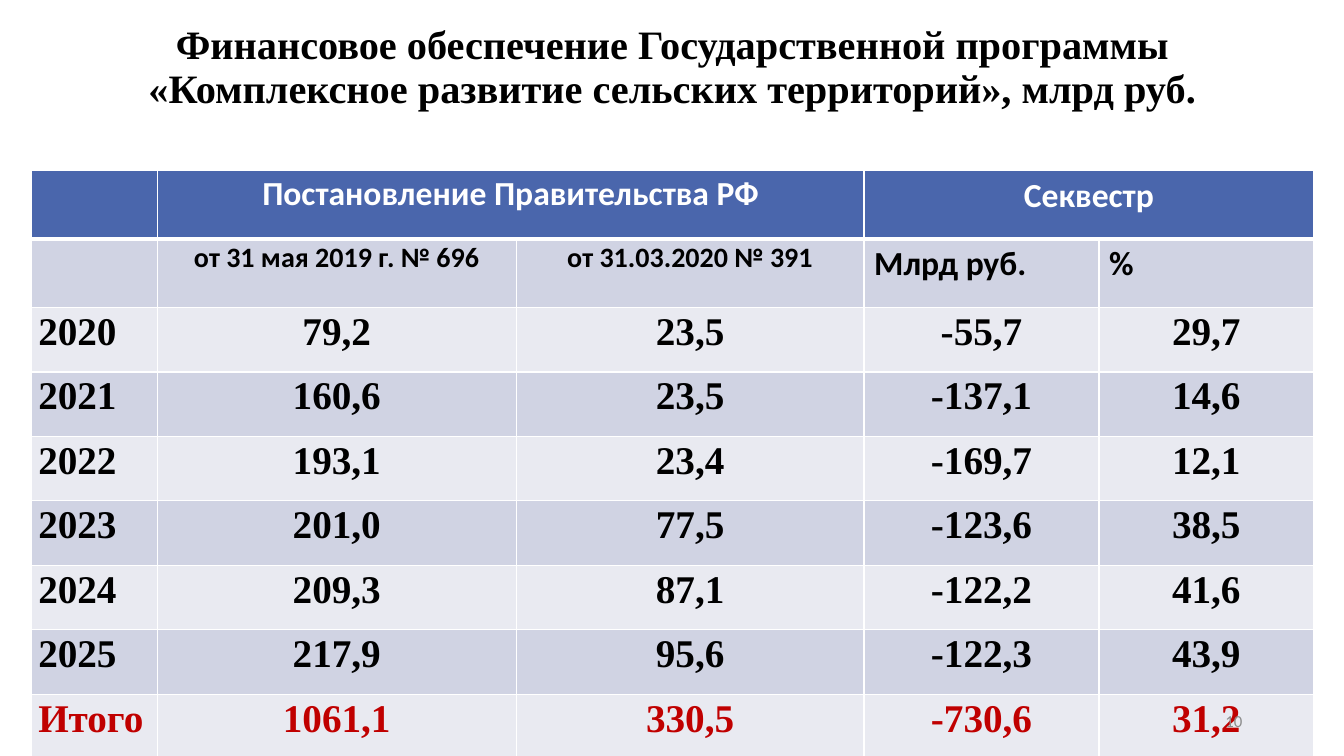
from dataclasses import dataclass

from lxml import etree
from pptx import Presentation
from pptx.dml.color import RGBColor
from pptx.enum.text import MSO_ANCHOR, PP_ALIGN
from pptx.oxml.ns import qn
from pptx.util import Pt

LEFT, CENTER, RIGHT = PP_ALIGN.LEFT, PP_ALIGN.CENTER, PP_ALIGN.RIGHT
MIDDLE = MSO_ANCHOR.MIDDLE
SCALE = 9144


@dataclass(frozen=True)
class Theme:
    """Colours, fonts and type sizes of the slide."""
    white: str = "FFFFFF"
    black: str = "000000"
    blue: str = "4A66AC"
    dark: str = "D0D3E3"
    light: str = "E9EAF1"
    red: str = "C00000"
    gray: str = "8C8C8C"
    sans: str = "Calibri"
    serif: str = "Times New Roman"
    title: float = 28.8
    body: float = 28
    head: float = 24
    sub: float = 20
    note: float = 12


def px(count):
    """Turn pixels into EMU."""
    return count * SCALE


class Page:
    """Draws elements on one slide in one theme."""

    def __init__(self, slide, theme):
        """Keep the slide and the theme."""
        self.slide, self.theme = slide, theme

    def phrase(self, frame, text, size, face, color, align, bold=True):
        """Put one styled paragraph into a text frame."""
        para = frame.paragraphs[0]
        para.text, para.alignment = text, align
        font = para.font
        font.size, font.name, font.bold = Pt(size), face, bold
        font.color.rgb = RGBColor.from_string(color)
        return para

    def label(self, box, text, size, face, color, align, bold=True):
        """Add a text box centred on its height."""
        frame = self.slide.shapes.add_textbox(*map(px, box)).text_frame
        frame.word_wrap = True
        frame.vertical_anchor = MIDDLE
        return self.phrase(frame, text, size, face, color, align, bold)

    def grid(self, left, top, cols, rows):
        """Add an empty table with the given column widths and row heights."""
        table = self.slide.shapes.add_table(
            len(rows), len(cols), px(left), px(top), px(sum(cols)), px(sum(rows))).table
        for col, width in zip(table.columns, cols):
            col.width = px(width)
        for row, height in zip(table.rows, rows):
            row.height = px(height)
        return table

    def paint(self, cell, fill, above=1, below=1):
        """Give a cell its fill and white borders."""
        props = cell._tc.get_or_add_tcPr()
        for side, width in zip("LRTB", (1, 1, above, below)):
            line = etree.SubElement(props, qn(f"a:ln{side}"), w=str(Pt(width)))
            solid = etree.SubElement(line, qn("a:solidFill"))
            etree.SubElement(solid, qn("a:srgbClr"), val=self.theme.white)
        cell.fill.solid()
        cell.fill.fore_color.rgb = RGBColor.from_string(fill)

    def entry(self, cell, text, size, face, color, align=CENTER, tight=True):
        """Fill a cell with text, tight ones with slim margins and looser lines."""
        para = self.phrase(cell.text_frame, text, size, face, color, align)
        if tight:
            cell.margin_left = cell.margin_right = px(7)
            cell.margin_top = cell.margin_bottom = 0
            para.line_spacing, para.space_after = 1.07, Pt(8)


TITLE = ("Финансовое обеспечение Государственной программы "
         "«Комплексное развитие сельских территорий», млрд руб.")
COLS = [125, 356, 345, 233, 213]
DATA = [
    ("2020", "79,2", "23,5", "-55,7", "29,7"),
    ("2021", "160,6", "23,5", "-137,1", "14,6"),
    ("2022", "193,1", "23,4", "-169,7", "12,1"),
    ("2023", "201,0", "77,5", "-123,6", "38,5"),
    ("2024", "209,3", "87,1", "-122,2", "41,6"),
    ("2025", "217,9", "95,6", "-122,3", "43,9"),
    ("Итого", "1061,1", "330,5", "-730,6", "31,2"),
]


def main():
    """Build the slide and save it."""
    deck = Presentation()
    deck.slide_width, deck.slide_height = px(1333), px(750)
    theme = Theme()
    page = Page(deck.slides.add_slide(deck.slide_layouts[6]), theme)

    title = page.label((92, 15, 1150, 106), TITLE, theme.title,
                       theme.serif, theme.black, CENTER)
    title.line_spacing = 0.9

    table = page.grid(31, 169, COLS, [68] * 2 + [64] * len(DATA))
    for row in range(len(table.rows)):
        fill = theme.dark if row % 2 else theme.light
        for col in range(len(COLS)):
            page.paint(table.cell(row, col), fill if row else theme.blue,
                       above=3 if row == 1 else 1, below=1 if row else 3)

    heads = ((1, "Постановление Правительства РФ", True), (3, "Секвестр", False))
    for col, text, tight in heads:
        cell = table.cell(0, col)
        cell.merge(table.cell(0, col + 1))
        page.entry(cell, text, theme.head, theme.sans, theme.white, tight=tight)

    for col, text in enumerate(("от 31 мая 2019 г. № 696", "от 31.03.2020 № 391"), 1):
        page.entry(table.cell(1, col), text, theme.sub, theme.sans, theme.black)
    for col, text in enumerate(("Млрд руб.", "%"), 3):
        page.entry(table.cell(1, col), text, theme.head, theme.sans,
                   theme.black, LEFT, tight=False)

    for row, values in enumerate(DATA, 2):
        color = theme.red if values is DATA[-1] else theme.black
        for col, text in enumerate(values):
            page.entry(table.cell(row, col), text, theme.body, theme.serif,
                       color, CENTER if col else LEFT)

    page.label((942, 695, 300, 40), "10", theme.note, theme.sans,
               theme.gray, RIGHT, bold=False)
    deck.save("out.pptx")


if __name__ == "__main__":
    main()
